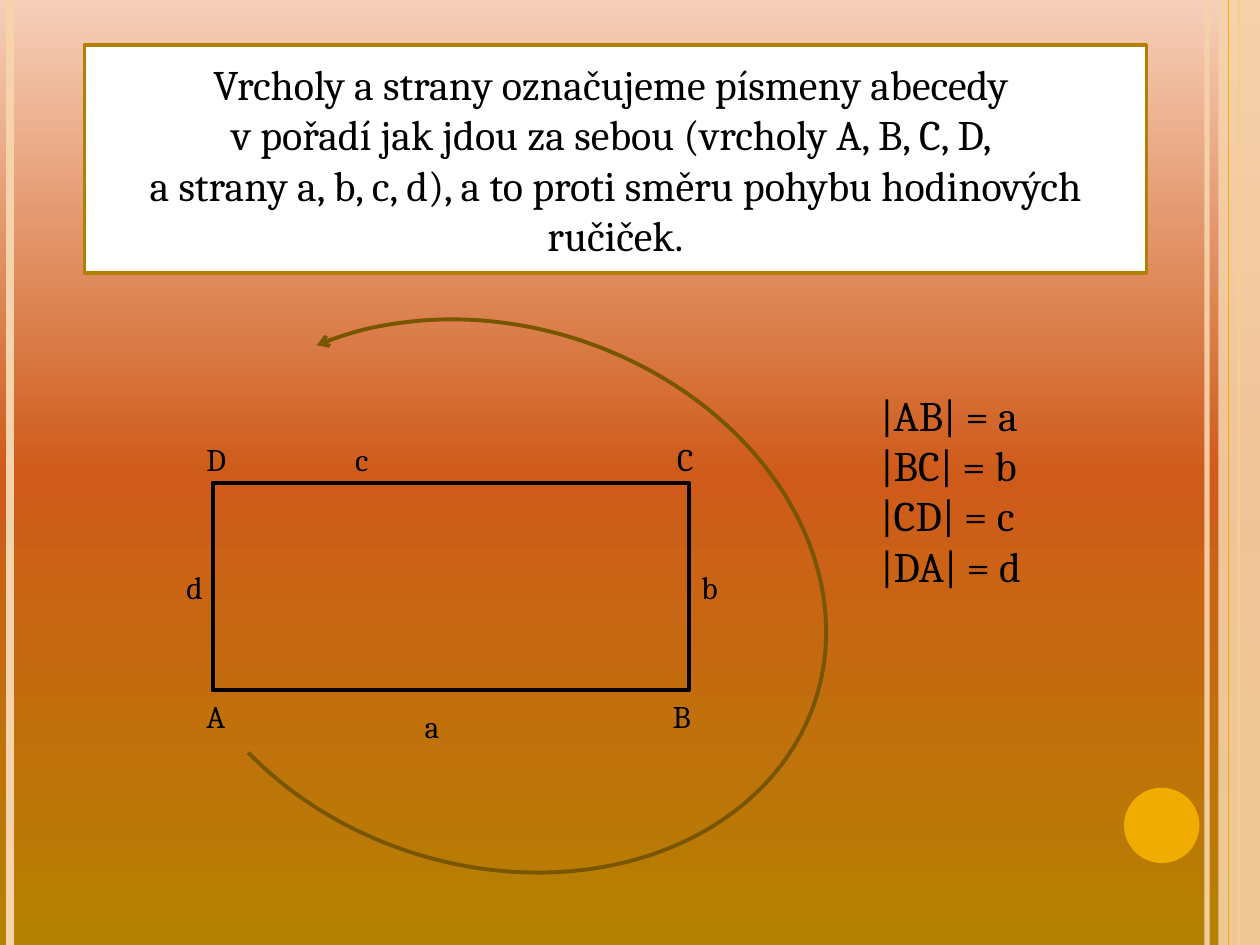
"""Build a slide on naming the vertices and sides of a rectangle."""
import copy
from typing import NamedTuple, Optional

import lxml.etree
import pptx
import pptx.dml.color
import pptx.enum.shapes
import pptx.enum.text
import pptx.oxml.ns
import pptx.util

Cm = pptx.util.Cm
Pt = pptx.util.Pt
RGBColor = pptx.dml.color.RGBColor
Preset = pptx.enum.shapes.MSO_SHAPE
Align = pptx.enum.text.PP_ALIGN

BLACK = RGBColor(0x00, 0x00, 0x00)
WHITE = RGBColor(0xFF, 0xFF, 0xFF)
CREAM = RGBColor(0xF6, 0xD3, 0xAB)
AMBER = RGBColor(0xF0, 0xAD, 0x00)
OCHRE = RGBColor(0xB2, 0x80, 0x00)
OLIVE = RGBColor(0x78, 0x56, 0x00)
PEACH = RGBColor(0xF6, 0xCF, 0xB9)
RUST = RGBColor(0xCF, 0x5B, 0x1B)
MUSTARD = RGBColor(0xB4, 0x82, 0x00)

FONT = "Cambria"
WIDTH, HEIGHT = 25.4, 19.05
LABEL_HEIGHT = 1.02
TOP_ROW, MIDDLE_ROW, BOTTOM_ROW = 8.74, 11.33, 13.92


class Frame(NamedTuple):
    left: float
    top: float
    width: float
    height: float


class Stripe(NamedTuple):
    x: float
    color: RGBColor
    weight: float
    opacity: int = 100


class Label(NamedTuple):
    text: str
    left: float
    top: float
    width: float


STRIPES = [
    Stripe(24.33, CREAM, 3, 93),
    Stripe(0.2, CREAM, 4.5),
    Stripe(24.97, AMBER, 1.5),
]
INNER_STRIPE = Stripe(24.77, AMBER, 0.75)

LABELS = [
    Label("C", 13.49, TOP_ROW, 0.41),
    Label("B", 13.31, BOTTOM_ROW, 1.19),
    Label("D", 3.91, TOP_ROW, 0.99),
    Label("A", 3.91, BOTTOM_ROW, 0.79),
    Label("c", 6.91, TOP_ROW, 2.39),
    Label("b", 13.89, MIDDLE_ROW, 2.01),
    Label("d", 3.51, MIDDLE_ROW, 0.99),
    Label("a", 8.31, 14.12, 1.6),
]

RULE = "\n".join([
    "Vrcholy a strany označujeme písmeny abecedy ",
    "v pořadí jak jdou za sebou (vrcholy A, B, C, D, ",
    "a strany a, b, c, d), a to proti směru pohybu hodinových ručiček.",
])
SIDES = "|AB| = a\n|BC| = b\n|CD| = c\n|DA| = d"


def add_child(parent, tag: str, **attributes: str) -> None:
    """Append a drawing element with the given attributes."""
    lxml.etree.SubElement(parent, pptx.oxml.ns.qn(tag), attributes)


def set_opacity(element, percent: int) -> None:
    """Make the first colour inside an element partly transparent."""
    color = element.xpath(".//a:srgbClr")[0]
    add_child(color, "a:alpha", val=str(percent * 1000))


def paint_background(page) -> None:
    """Fill the page with a three-colour gradient from top to bottom."""
    fill = page.background.fill
    fill.gradient()
    fill.gradient_angle = 270
    stops = page.element.xpath(".//a:gsLst")[0]
    stops.append(copy.deepcopy(stops[-1]))
    for index, color in enumerate([PEACH, RUST, MUSTARD]):
        stop = fill.gradient_stops[index]
        stop.position = index / 2
        stop.color.rgb = color


def add_stripe(page, stripe: Stripe) -> None:
    """Draw a vertical line over the full height of the page."""
    line = page.shapes.add_connector(
        pptx.enum.shapes.MSO_CONNECTOR.STRAIGHT,
        Cm(stripe.x), Cm(0), Cm(stripe.x), Cm(HEIGHT))
    line.line.color.rgb = stripe.color
    line.line.width = Pt(stripe.weight)
    properties = line.element.spPr
    if stripe.opacity < 100:
        set_opacity(properties, stripe.opacity)
    add_child(properties, "a:effectLst")


def add_shape(page, preset, frame: Frame, fill: Optional[RGBColor] = None,
              outline: Optional[RGBColor] = None, weight: float = 2.25):
    """Add a preset shape without shadow."""
    shape = page.shapes.add_shape(preset, *map(Cm, frame))
    shape.shadow.inherit = False
    if fill is None:
        shape.fill.background()
    else:
        shape.fill.solid()
        shape.fill.fore_color.rgb = fill
    if outline is None:
        shape.line.fill.background()
    else:
        shape.line.color.rgb = outline
        shape.line.width = Pt(weight)
    return shape


def write(box, text: str, size: float, align=Align.LEFT) -> None:
    """Set the text of a box and format its spans."""
    box.text_frame.text = text
    box.text_frame.word_wrap = True
    for para in box.text_frame.paragraphs:
        para.alignment = align
        for span in para.runs:
            span.font.name = FONT
            span.font.size = Pt(size)
            span.font.color.rgb = BLACK


def add_text(page, frame: Frame, text: str, size: float) -> None:
    """Add a text box that grows with its text."""
    box = page.shapes.add_textbox(*map(Cm, frame))
    write(box, text, size)
    box.text_frame.auto_size = pptx.enum.text.MSO_AUTO_SIZE.SHAPE_TO_FIT_TEXT


def add_decoration(page) -> None:
    """Draw the stripes, the side panel and the dot."""
    for stripe in STRIPES:
        add_stripe(page, stripe)
    panel = add_shape(page, Preset.RECTANGLE, Frame(24.56, 0, 0.84, HEIGHT), CREAM)
    set_opacity(panel.element.spPr, 87)
    add_stripe(page, INNER_STRIPE)
    add_shape(page, Preset.OVAL, Frame(22.66, 15.88, 1.52, 1.52), AMBER)


def add_direction_arrow(page) -> None:
    """Draw the arc that runs anticlockwise around the rectangle."""
    arc = add_shape(page, Preset.ARC, Frame(3.18, 6.58, 13.59, 10.87), outline=OLIVE)
    arc.adjustments[0] = 130.1
    arc.adjustments[1] = 77.85
    arc.rotation = 17.8
    outline = arc.element.spPr.find(pptx.oxml.ns.qn("a:ln"))
    add_child(outline, "a:headEnd", type="arrow")


def main() -> None:
    """Build and save the deck."""
    deck = pptx.Presentation()
    deck.slide_width, deck.slide_height = Cm(WIDTH), Cm(HEIGHT)
    page = deck.slides.add_slide(deck.slide_layouts[6])
    paint_background(page)
    add_decoration(page)
    add_shape(page, Preset.RECTANGLE, Frame(4.29, 9.73, 9.6, 4.19), outline=BLACK)
    for label in LABELS:
        frame = Frame(label.left, label.top, label.width, LABEL_HEIGHT)
        add_text(page, frame, label.text, 18)
    rule = add_shape(page, Preset.RECTANGLE, Frame(1.7, 0.91, 21.41, 4.6), WHITE, OCHRE, 2)
    write(rule, RULE, 24, Align.CENTER)
    rule.text_frame.vertical_anchor = pptx.enum.text.MSO_ANCHOR.MIDDLE
    add_direction_arrow(page)
    add_text(page, Frame(17.5, 7.72, 5.59, 4.37), SIDES, 24)
    deck.save("out.pptx")


if __name__ == "__main__":
    main()
